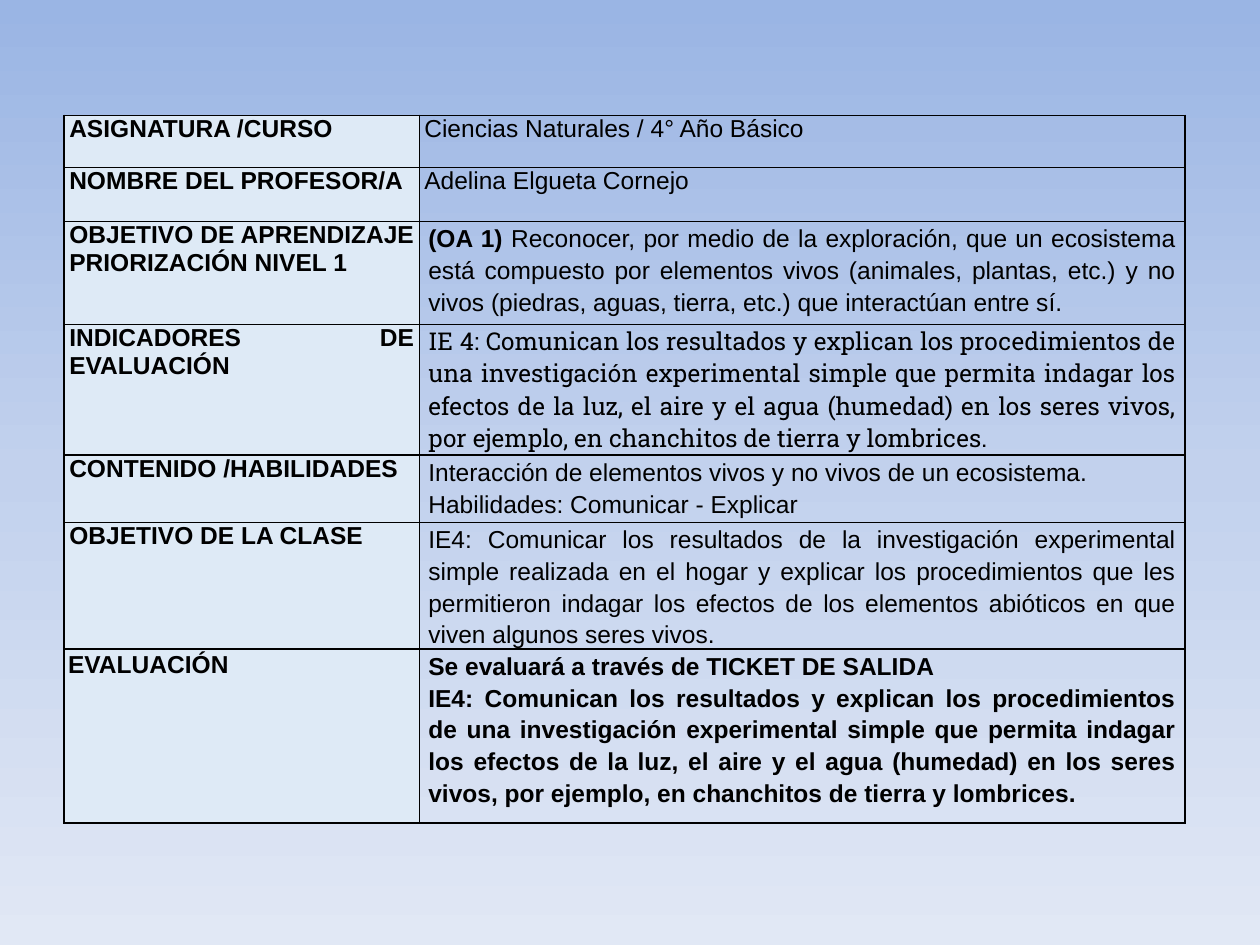
import copy
import dataclasses

import pptx
import pptx.dml.color
import pptx.enum.text
import pptx.oxml
import pptx.oxml.ns
import pptx.util

Pt = pptx.util.Pt


@dataclasses.dataclass(frozen=True)
class Theme:
    sky: tuple = ((0, "9AB5E4"), (0.5, "C2D1ED"), (1, "E1E8F5"))
    ink: str = "000000"
    label: str = "DEEAF6"
    size: float = 14
    line: float = 1
    sans: str = "Arial"
    slab: str = "Roboto Slab"


@dataclasses.dataclass(frozen=True)
class Row:
    label: str
    height: float
    texts: tuple
    lead: str = ""
    bold: bool = False
    face: str = Theme.sans
    space: float = 1.15
    inset: tuple = (5.2, 0)
    edge: tuple = (2.9, 0)


THEME = Theme()
SLIM = (2.9, 0)
ROWS = (
    Row("ASIGNATURA /CURSO", 29.7,
        ("Ciencias Naturales / 4° Año Básico",), space=1, inset=SLIM),
    Row("NOMBRE DEL PROFESOR/A", 30.9,
        ("Adelina Elgueta Cornejo",), space=1, inset=SLIM),
    Row("OBJETIVO DE APRENDIZAJE PRIORIZACIÓN NIVEL 1", 58.9,
        ("Reconocer, por medio de la exploración, que un ecosistema está "
         "compuesto por elementos vivos (animales, plantas, etc.) y no vivos "
         "(piedras, aguas, tierra, etc.) que interactúan entre sí.",),
        lead="(OA 1) "),
    Row("INDICADORES DE EVALUACIÓN", 74.6,
        ("IE 4: Comunican los resultados y explican los procedimientos de una "
         "investigación experimental simple que permita indagar los efectos de "
         "la luz, el aire y el agua (humedad) en los seres vivos, por ejemplo, "
         "en chanchitos de tierra y lombrices.",),
        face=THEME.slab, space=1),
    Row("CONTENIDO /HABILIDADES", 38.5,
        ("Interacción de elementos vivos y no vivos de un ecosistema.",
         "Habilidades: Comunicar - Explicar")),
    Row("OBJETIVO DE LA CLASE", 72,
        ("IE4: Comunicar los resultados de la investigación experimental simple "
         "realizada en el hogar y explicar los procedimientos que les "
         "permitieron indagar los efectos de los elementos abióticos en que "
         "viven algunos seres vivos.",)),
    Row("EVALUACIÓN", 99.4,
        ("Se evaluará a través de TICKET DE SALIDA",
         "IE4: Comunican los resultados y explican los procedimientos de una "
         "investigación experimental simple que permita indagar los efectos de "
         "la luz, el aire y el agua (humedad) en los seres vivos, por ejemplo, "
         "en chanchitos de tierra y lombrices."),
        bold=True, edge=(2.2, 1.4)),
)


def tint(code: str) -> pptx.dml.color.RGBColor:
    return pptx.dml.color.RGBColor.from_string(code)


def paint(slide) -> None:
    fill = slide.background.fill
    fill.gradient()
    fill.gradient_angle = 270
    stops = slide.element.find(".//" + pptx.oxml.ns.qn("a:gsLst"))
    stops.insert(1, copy.deepcopy(stops[0]))
    for stop, (place, code) in zip(fill.gradient_stops, THEME.sky):
        stop.position = place
        stop.color.rgb = tint(code)


def frame(cell) -> None:
    props = cell._tc.get_or_add_tcPr()
    for side in "LRTB":
        props.append(pptx.oxml.parse_xml(
            f'<a:ln{side} {pptx.oxml.ns.nsdecls("a")} w="{Pt(THEME.line)}">'
            f'<a:solidFill><a:srgbClr val="{THEME.ink}"/></a:solidFill>'
            f'</a:ln{side}>'))


def write(cell, texts: tuple, inset: tuple, bold: bool, face: str,
          space: float, lead: str = "") -> None:
    cell.margin_left = cell.margin_right = Pt(inset[0])
    cell.margin_top = cell.margin_bottom = Pt(inset[1])
    body = cell.text_frame
    for rank, text in enumerate(texts):
        para = body.add_paragraph() if rank else body.paragraphs[0]
        para.alignment = pptx.enum.text.PP_ALIGN.JUSTIFY
        para.line_spacing = space
        font = para.font
        font.name = face
        font.size = Pt(THEME.size)
        font.bold = bold
        font.color.rgb = tint(THEME.ink)
        if lead:
            run = para.add_run()
            run.text = lead
            run.font.bold = True
        para.add_run().text = text


def draw(slide, rows: tuple) -> None:
    high = sum(row.height for row in rows)
    table = slide.shapes.add_table(
        len(rows), 2, Pt(36.7), Pt(66), Pt(640.6), Pt(high)).table
    table.first_row = table.horz_banding = False
    for column, width in zip(table.columns, (202.9, 437.7)):
        column.width = Pt(width)
    for rank, row in enumerate(rows):
        table.rows[rank].height = Pt(row.height)
        left, right = table.cell(rank, 0), table.cell(rank, 1)
        frame(left)
        frame(right)
        left.fill.solid()
        left.fill.fore_color.rgb = tint(THEME.label)
        right.fill.background()
        write(left, (row.label,), row.edge, True, THEME.sans, 1)
        write(right, row.texts, row.inset, row.bold, row.face,
              row.space, row.lead)


def main() -> None:
    deck = pptx.Presentation()
    deck.slide_width, deck.slide_height = Pt(720), Pt(540)
    slide = deck.slides.add_slide(deck.slide_layouts[6])
    paint(slide)
    draw(slide, ROWS)
    deck.save("out.pptx")


if __name__ == "__main__":
    main()
